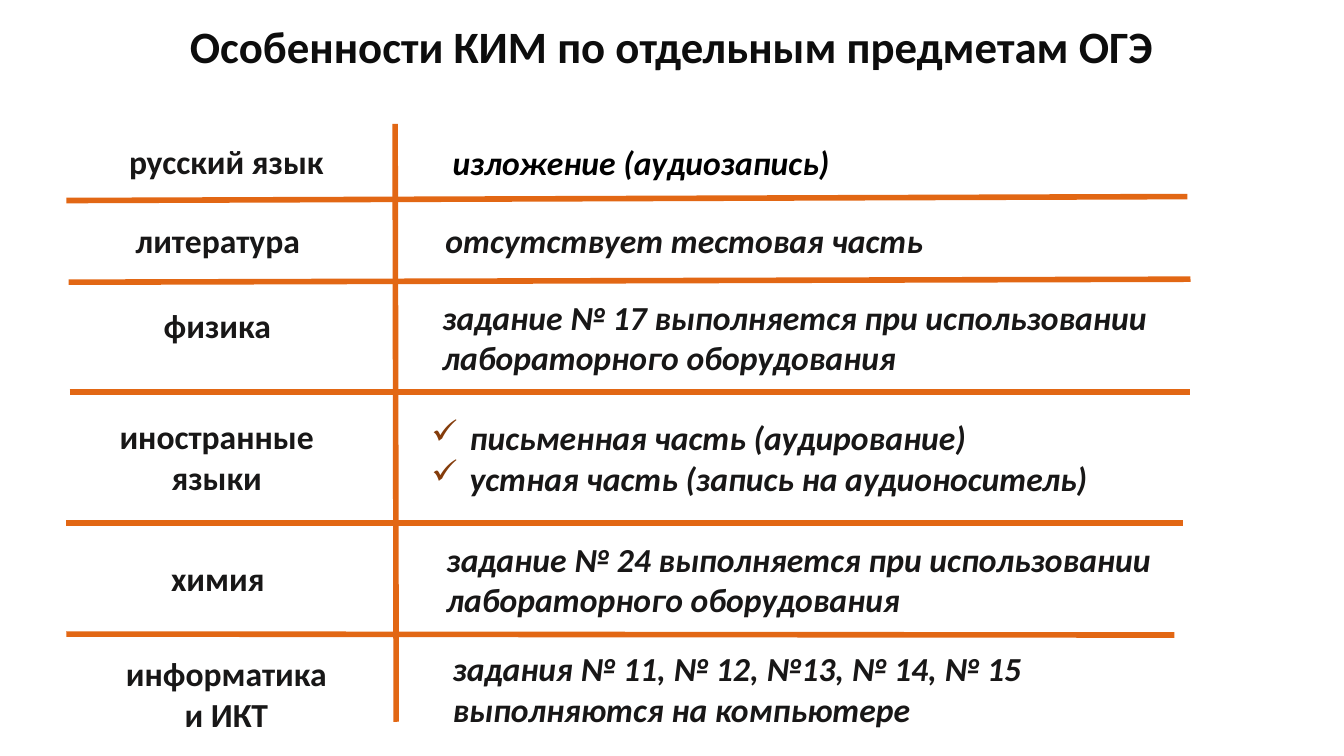
from dataclasses import dataclass

import pptx
import pptx.dml.color
import pptx.enum.shapes
import pptx.enum.text
import pptx.oxml.ns
import pptx.shapes.autoshape
import pptx.slide
import pptx.text.text
import pptx.util
from lxml import etree

Alignment = pptx.enum.text.PP_ALIGN
Anchor = pptx.enum.text.MSO_ANCHOR


@dataclass(frozen=True)
class Theme:
    font: str = "Calibri"
    title: str = "0D0D0D"
    body: str = "181717"
    black: str = "000000"
    rule: str = "E26714"
    bullet: str = "843C0B"
    paper: str = "FFFFFF"
    title_size: int = 32
    body_size: int = 24
    rule_width: int = 4


@dataclass(frozen=True)
class Box:
    """Left, top, width and height in percent of the slide's size."""
    left: float
    top: float
    width: float
    height: float


@dataclass(frozen=True)
class Rule:
    """End points in percent of the slide's size."""
    x1: float
    y1: float
    x2: float
    y2: float


@dataclass(frozen=True)
class Subject:
    name: str
    name_box: Box
    features: tuple[str, ...]
    features_box: Box
    color: str = Theme.body


THEME = Theme()
WIDTH = pptx.util.Inches(13.33)
HEIGHT = pptx.util.Inches(7.5)
ONE_LINE, TWO_LINES = 6.67, 12.13

TITLE = "Особенности КИМ по отдельным предметам ОГЭ"
TITLE_BOX = Box(4.43, 1.87, 91.12, 8.53)

RULES = [
    Rule(29.4, 16.4, 29.48, 95.47),
    Rule(4.95, 26.53, 88.35, 26),
    Rule(5.1, 37.33, 88.58, 36.93),
    Rule(5.18, 51.87, 88.58, 51.87),
    Rule(4.95, 69.2, 88.05, 69.2),
    Rule(4.95, 83.87, 87.38, 84),
]

SUBJECTS = [
    Subject("русский язык", Box(7.73, 18, 18.23, ONE_LINE),
            ("изложение (аудиозапись)",),
            Box(32.93, 18.13, 47.78, ONE_LINE), THEME.black),
    Subject("литература", Box(8.33, 28.4, 15.75, ONE_LINE),
            ("отсутствует тестовая часть",),
            Box(32.4, 27.87, 55.28, 7.87)),
    Subject("физика", Box(8.33, 39.73, 15.68, ONE_LINE),
            ("задание № 17 выполняется при использовании лабораторного оборудования",),
            Box(32.18, 39.73, 59.85, 9.73)),
    Subject("иностранные языки", Box(6.9, 54.4, 18.45, TWO_LINES),
            ("письменная часть (аудирование)", "устная часть (запись на аудионоситель)"),
            Box(31.35, 54.93, 57, 11.2)),
    Subject("химия", Box(9.23, 73.2, 13.95, ONE_LINE),
            ("задание № 24 выполняется при использовании лабораторного оборудования",),
            Box(32.48, 71.73, 57.53, 9.73)),
    Subject("информатика и ИКТ", Box(7.73, 85.73, 18.23, TWO_LINES),
            ("задания № 11, № 12, №13, № 14, № 15 выполняются на компьютере",),
            Box(32.93, 85.47, 58.28, 11.2)),
]


def across(share: float) -> int:
    return round(WIDTH * share / 100)


def down(share: float) -> int:
    return round(HEIGHT * share / 100)


def place(box: Box) -> tuple[int, int, int, int]:
    return across(box.left), down(box.top), across(box.width), down(box.height)


def rgb(color: str) -> pptx.dml.color.RGBColor:
    return pptx.dml.color.RGBColor.from_string(color)


def set_all(target: object, values: dict[str, object]) -> None:
    for name, value in values.items():
        setattr(target, name, value)


def add_check_mark(paragraph: pptx.text.text._Paragraph) -> None:
    indent = pptx.util.Inches(0.38)
    properties = paragraph._p.get_or_add_pPr()
    properties.set("marL", str(indent))
    properties.set("indent", str(-indent))
    qn = pptx.oxml.ns.qn
    color = etree.SubElement(properties, qn("a:buClr"))
    etree.SubElement(color, qn("a:srgbClr"), val=THEME.bullet)
    etree.SubElement(properties, qn("a:buChar"), char="✓")


def write(shape: pptx.shapes.autoshape.Shape, lines: tuple[str, ...], color: str,
          size: int = THEME.body_size, italic: bool = False,
          alignment: Alignment = Alignment.CENTER, anchor: Anchor = Anchor.TOP) -> None:
    frame = shape.text_frame
    frame.text = "\n".join(lines)
    set_all(frame, {"word_wrap": True, "vertical_anchor": anchor,
                    "auto_size": pptx.enum.text.MSO_AUTO_SIZE.NONE})
    for paragraph in frame.paragraphs:
        paragraph.alignment = alignment
        if len(lines) > 1:
            add_check_mark(paragraph)
        font = paragraph.runs[0].font
        set_all(font, {"name": THEME.font, "size": pptx.util.Pt(size),
                       "bold": True, "italic": italic})
        font.color.rgb = rgb(color)


def add_rule(slide: pptx.slide.Slide, rule: Rule) -> None:
    line = slide.shapes.add_connector(
        pptx.enum.shapes.MSO_CONNECTOR.STRAIGHT,
        across(rule.x1), down(rule.y1), across(rule.x2), down(rule.y2))
    line.line.color.rgb = rgb(THEME.rule)
    line.line.width = pptx.util.Pt(THEME.rule_width)
    etree.SubElement(line._element.spPr, pptx.oxml.ns.qn("a:effectLst"))


def add_subject(slide: pptx.slide.Slide, subject: Subject) -> None:
    name = slide.shapes.add_textbox(*place(subject.name_box))
    write(name, (subject.name,), THEME.body)
    features = slide.shapes.add_shape(
        pptx.enum.shapes.MSO_SHAPE.RECTANGLE, *place(subject.features_box))
    features.shadow.inherit = False
    features.fill.solid()
    features.fill.fore_color.rgb = rgb(THEME.paper)
    features.line.fill.background()
    write(features, subject.features, subject.color, italic=True,
          alignment=Alignment.LEFT, anchor=Anchor.MIDDLE)


def main() -> None:
    presentation = pptx.Presentation()
    set_all(presentation, {"slide_width": WIDTH, "slide_height": HEIGHT})
    slide = presentation.slides.add_slide(presentation.slide_layouts[5])

    # Title
    title = slide.shapes.title
    set_all(title, dict(zip(("left", "top", "width", "height"), place(TITLE_BOX))))
    write(title, (TITLE,), THEME.title, THEME.title_size)

    # Dividing lines
    for rule in RULES:
        add_rule(slide, rule)

    # Subjects and their features
    for subject in SUBJECTS:
        add_subject(slide, subject)

    presentation.save("out.pptx")


if __name__ == "__main__":
    main()
